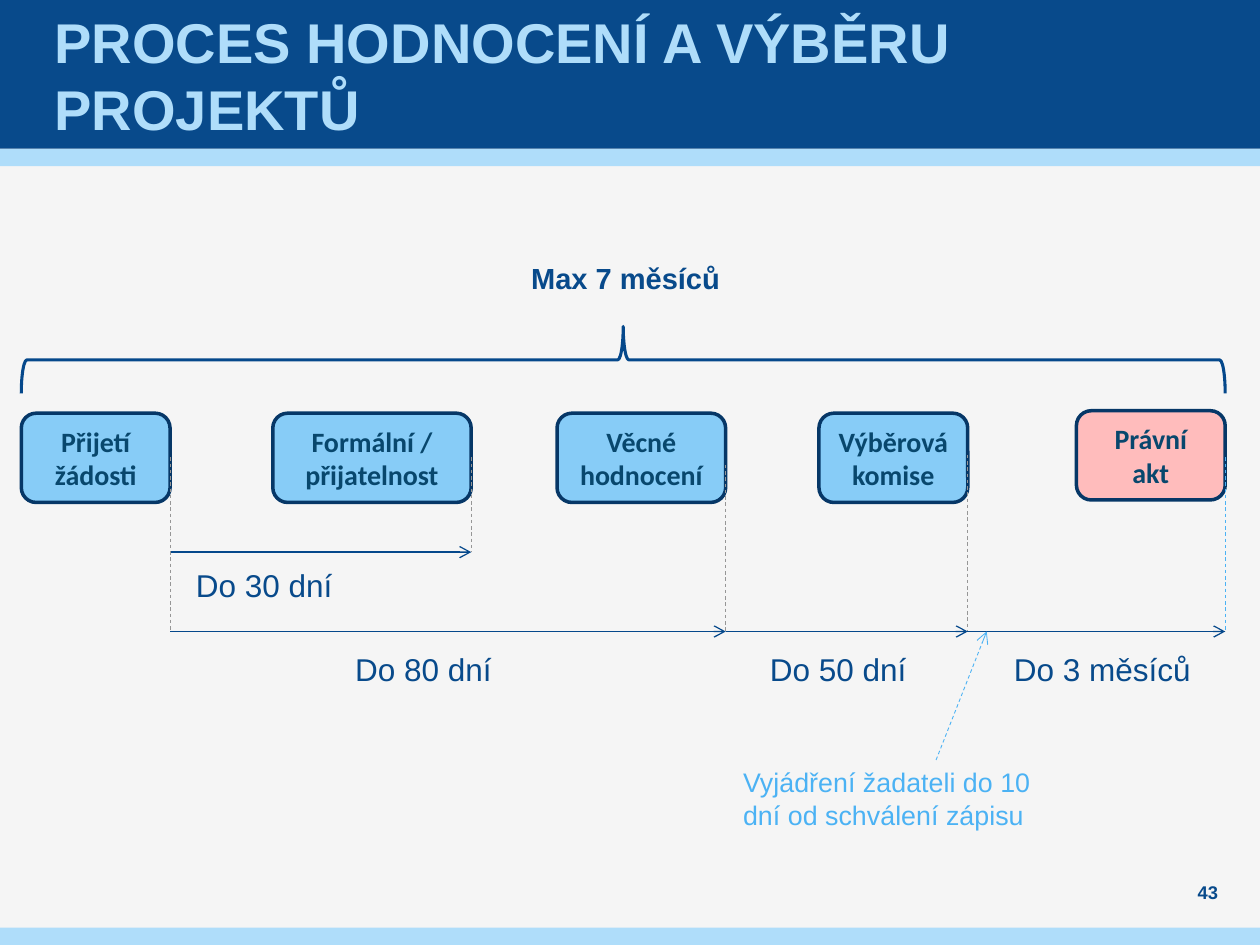
from lxml import etree
from pptx import Presentation
from pptx.dml.color import RGBColor
from pptx.enum.dml import MSO_LINE_DASH_STYLE as Dash
from pptx.enum.shapes import MSO_CONNECTOR as Connector, MSO_SHAPE as Shape
from pptx.enum.text import MSO_ANCHOR as Anchor, PP_ALIGN as Align
from pptx.oxml.ns import qn
from pptx.util import Cm, Pt

NAVY = RGBColor(0x08, 0x4A, 0x8B)
LINE_NAVY = RGBColor(0x05, 0x48, 0x8B)
BORDER = RGBColor(0x06, 0x37, 0x67)
STEP_TEXT = RGBColor(0x08, 0x47, 0x6D)
PALE_BLUE = RGBColor(0xAF, 0xDD, 0xFA)
STEP_BLUE = RGBColor(0x87, 0xCC, 0xF7)
STEP_PINK = RGBColor(0xFF, 0xBC, 0xBC)
SKY = RGBColor(0x4B, 0xB2, 0xF4)
GREY = RGBColor(0x96, 0x96, 0x96)
BACKGROUND = RGBColor(0xF5, 0xF5, 0xF5)

WIDTH, HEIGHT = 25.4, 19.05
HEADER, STRIPE = 3.0, 0.35
STEP_TOP, STEP_HEIGHT = 8.33, 1.8
FORMAL_Y, TIMELINE_Y = 11.13, 12.73
LABEL_TOP = 12.98


def write(frame, text, size=18, font="Arial", color=NAVY, bold=False,
          align=Align.LEFT, anchor=Anchor.TOP, insets=None):
    """Fill a text frame; insets are (horizontal, vertical) in centimetres."""
    frame.word_wrap = True
    frame.vertical_anchor = anchor
    if insets:
        frame.margin_left = frame.margin_right = Cm(insets[0])
        frame.margin_top = frame.margin_bottom = Cm(insets[1])
    para = frame.paragraphs[0]
    para.alignment = align
    span = para.add_run()
    span.text = text
    span.font.size = Pt(size)
    span.font.name = font
    span.font.bold = bold
    span.font.color.rgb = color


class ProcessPage:
    def __init__(self, page):
        self.page = page
        page.background.fill.solid()
        page.background.fill.fore_color.rgb = BACKGROUND

    def shape(self, kind, left, top, width, height, fill=None, line=None, weight=2):
        item = self.page.shapes.add_shape(
            kind, Cm(left), Cm(top), Cm(width), Cm(height))
        item.shadow.inherit = False
        if fill is None:
            item.fill.background()
        else:
            item.fill.solid()
            item.fill.fore_color.rgb = fill
        if line is None:
            item.line.fill.background()
        else:
            item.line.color.rgb = line
            item.line.width = Pt(weight)
        return item

    def band(self, top, height, color):
        self.shape(Shape.RECTANGLE, 0, top, WIDTH, height, color)

    def step(self, text, left, top, width, fill):
        box = self.shape(Shape.ROUNDED_RECTANGLE, left, top, width, STEP_HEIGHT,
                         fill, BORDER)
        write(box.text_frame, text, 16, "Calibri", STEP_TEXT, True,
              Align.CENTER, Anchor.MIDDLE)

    def text(self, text, left, top, width, height, **style):
        box = self.page.shapes.add_textbox(
            Cm(left), Cm(top), Cm(width), Cm(height))
        write(box.text_frame, text, **style)

    def line(self, start, end, color=LINE_NAVY, weight=0.75, dashed=False, arrow=True):
        connector = self.page.shapes.add_connector(
            Connector.STRAIGHT, *(Cm(value) for value in (*start, *end)))
        connector.line.color.rgb = color
        connector.line.width = Pt(weight)
        if dashed:
            connector.line.dash_style = Dash.DASH
        if arrow:
            outline = connector.line._get_or_add_ln()
            etree.SubElement(outline, qn("a:tailEnd"), type="arrow")
        etree.SubElement(connector._element.spPr, qn("a:effectLst"))

    def brace(self, left, top, width, height):
        """Draw an upward brace as a right brace turned a quarter to the left."""
        item = self.shape(Shape.RIGHT_BRACE, left + (width - height) / 2,
                          top + (height - width) / 2, height, width,
                          line=LINE_NAVY, weight=1.75)
        item.rotation = 270


def main():
    deck = Presentation()
    deck.slide_width, deck.slide_height = Cm(WIDTH), Cm(HEIGHT)
    page = ProcessPage(deck.slides.add_slide(deck.slide_layouts[6]))

    page.band(HEADER, STRIPE, PALE_BLUE)
    page.band(0, HEADER, NAVY)
    page.band(HEIGHT - STRIPE, STRIPE, PALE_BLUE)
    page.text("PROCES HODNOCENÍ A VÝBĚRU PROJEKTŮ", 1, 0, 23.4, HEADER, size=32,
              color=PALE_BLUE, bold=True, anchor=Anchor.MIDDLE, insets=(0.1, 0))
    page.text("43", 23.7, 17.73, 1.3, 0.5, size=10.5, bold=True,
              align=Align.CENTER, anchor=Anchor.MIDDLE, insets=(0, 0))

    steps = [
        ("Přijetí žádosti", 0.43, STEP_TOP, 3, STEP_BLUE),
        ("Formální / přijatelnost", 5.5, STEP_TOP, 4, STEP_BLUE),
        ("Věcné hodnocení", 11.23, STEP_TOP, 3.4, STEP_BLUE),
        ("Výběrová komise", 16.51, STEP_TOP, 3, STEP_BLUE),
        ("Právní akt", 21.7, STEP_TOP - 0.05, 3, STEP_PINK),
    ]
    for step in steps:
        page.step(*step)
    received, formal, rated, selected, signed = (
        left + width for _, left, _, width, _ in steps)

    page.brace(0.43, 6.58, signed - 0.43, 1.35)
    page.text("Max 7 měsíců", 10.46, 5.13, 4.45, 1, size=16.6, bold=True)

    for start, end, y in [(received, formal, FORMAL_Y),
                          (received, rated, TIMELINE_Y),
                          (rated, selected, TIMELINE_Y),
                          (selected - 0.25, signed, TIMELINE_Y)]:
        page.line((start, y), (end, y))

    for text, left, top, width in [("Do 30 dní", 3.7, 11.28, 3.6),
                                   ("Do 80 dní", 6.91, LABEL_TOP, 3.6),
                                   ("Do 50 dní", 15.27, LABEL_TOP, 3.6),
                                   ("Do 3 měsíců", 20.19, LABEL_TOP, 4.11)]:
        page.text(text, left, top, width, 1)

    for x, top, bottom, color in [(received, 9.22, TIMELINE_Y, GREY),
                                  (formal, 9.22, FORMAL_Y, GREY),
                                  (rated, 9.37, TIMELINE_Y, GREY),
                                  (selected, 9.17, TIMELINE_Y, GREY),
                                  (signed, 9.22, TIMELINE_Y, SKY)]:
        page.line((x, top), (x, bottom), color, 0.5, dashed=True, arrow=False)

    page.line((18.87, 15.32), (19.89, TIMELINE_Y), SKY, 0.5, dashed=True)
    page.text("Vyjádření žadateli do 10 dní od schválení zápisu",
              14.73, 15.32, 6.96, 1.4, size=15.3, color=SKY)

    deck.save("out.pptx")


if __name__ == "__main__":
    main()
